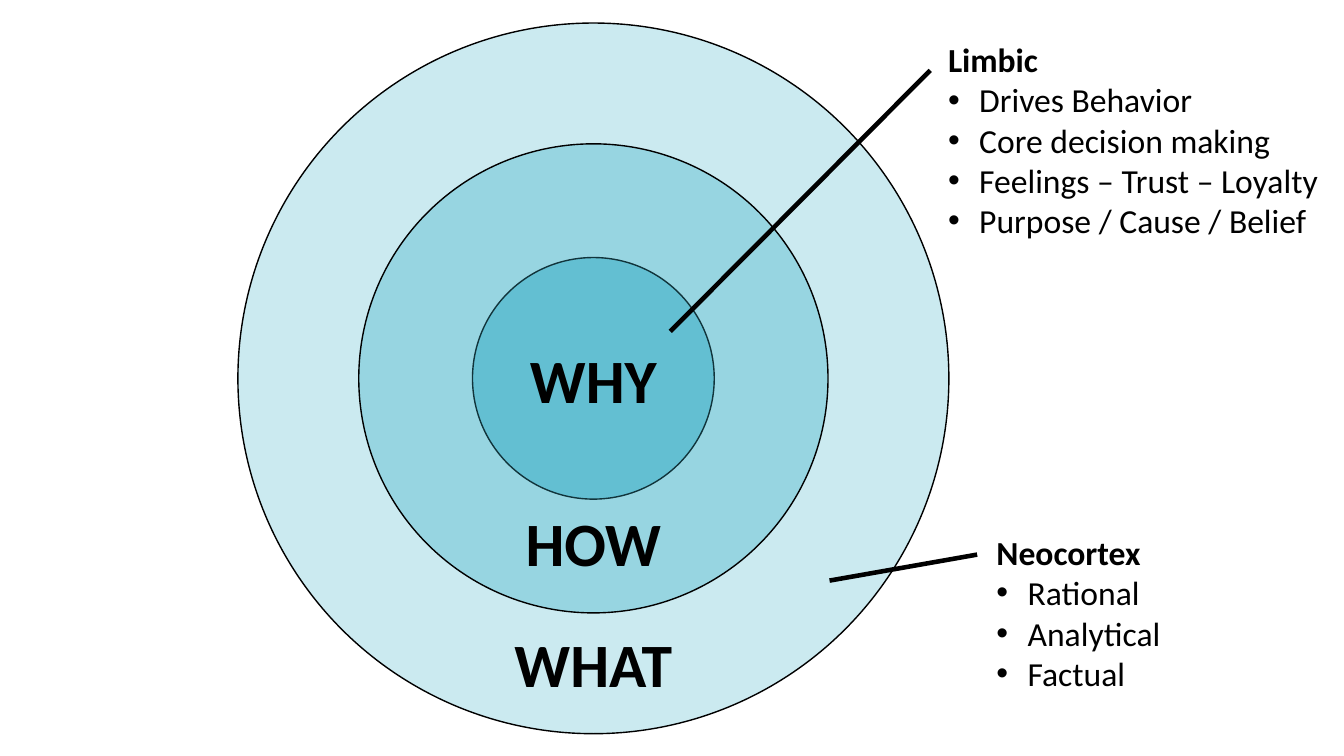
from pptx import Presentation
from pptx.dml.color import RGBColor
from pptx.enum.shapes import MSO_CONNECTOR, MSO_SHAPE
from pptx.enum.text import MSO_ANCHOR, MSO_AUTO_SIZE, PP_ALIGN
from pptx.oxml.ns import qn
from pptx.util import Inches, Pt
from lxml import etree

OVAL = MSO_SHAPE.OVAL
STRAIGHT = MSO_CONNECTOR.STRAIGHT
MIDDLE = MSO_ANCHOR.MIDDLE
FIT_SHAPE = MSO_AUTO_SIZE.SHAPE_TO_FIT_TEXT
CENTER, LEFT = PP_ALIGN.CENTER, PP_ALIGN.LEFT

BLACK = RGBColor(0x00, 0x00, 0x00)
PALE_TEAL = RGBColor(0xCB, 0xEA, 0xF0)
MID_TEAL = RGBColor(0x97, 0xD5, 0xE1)
DEEP_TEAL = RGBColor(0x63, 0xBF, 0xD2)
DARK_TEAL = RGBColor(0x11, 0x34, 0x3B)

FONT = "Calibri"
SLIDE_WIDTH, SLIDE_HEIGHT = Inches(13.33), Inches(7.5)
COLUMN, ROW = SLIDE_WIDTH / 100, SLIDE_HEIGHT / 100
BULLET_INDENT = Inches(0.31)

RINGS = [
    (1, PALE_TEAL, BLACK),
    (0.66, MID_TEAL, BLACK),
    (0.34, DEEP_TEAL, DARK_TEAL),
]
RING_LABELS = [("WHY", 0.5), ("HOW", 0.73), ("WHAT", 0.9)]
LIMBIC = ["Drives Behavior", "Core decision making",
          "Feelings – Trust – Loyalty", "Purpose / Cause / Belief"]
NEOCORTEX = ["Rational", "Analytical", "Factual"]


def grid_box(left, top, width, height):
    """Turn a box in columns and rows into slide lengths."""
    return (int(left * COLUMN), int(top * ROW),
            int(width * COLUMN), int(height * ROW))


def add_text(page, box, lines, size, align):
    """Write a bold first line and bulleted lines below it."""
    shape = page.shapes.add_textbox(*box)
    frame = shape.text_frame
    frame.word_wrap = False
    frame.auto_size = FIT_SHAPE
    for index, line in enumerate(lines):
        para = frame.add_paragraph() if index else frame.paragraphs[0]
        para.text = line
        para.alignment = align
        if index:
            properties = para._p.get_or_add_pPr()
            properties.set("marL", str(BULLET_INDENT))
            properties.set("indent", str(-BULLET_INDENT))
            etree.SubElement(properties, qn("a:buFont")).set("typeface", "Arial")
            etree.SubElement(properties, qn("a:buChar")).set("char", "•")
        para.font.name = FONT
        para.font.size = Pt(size)
        para.font.bold = index == 0
        para.font.color.rgb = BLACK
    return frame


def add_golden_circle(page, box):
    """Draw the concentric rings and their labels inside a square box."""
    left, top, width, height = box
    for share, fill, outline in RINGS:
        margin = (1 - share) / 2
        ring = page.shapes.add_shape(
            OVAL, int(left + margin * width), int(top + margin * height),
            int(share * width), int(share * height))
        ring.shadow.inherit = False
        ring.fill.solid()
        ring.fill.fore_color.rgb = fill
        ring.line.color.rgb = outline
        ring.line.width = Pt(1)
    label_width, label_height = int(0.3 * width), int(0.12 * height)
    for label, middle in RING_LABELS:
        label_box = (int(left + (width - label_width) / 2),
                     int(top + middle * height - label_height / 2),
                     label_width, label_height)
        frame = add_text(page, label_box, [label], 44, CENTER)
        frame.vertical_anchor = MIDDLE


def add_callout(page, box, heading, traits, start, end):
    """Place a trait list in its box and a pointer between box shares."""
    left, top, width, height = box
    add_text(page, box, [heading, *traits], 24, LEFT)
    pointer = page.shapes.add_connector(
        STRAIGHT,
        int(left + start[0] * width), int(top + start[1] * height),
        int(left + end[0] * width), int(top + end[1] * height))
    pointer.line.color.rgb = BLACK
    pointer.line.width = Pt(3.25)
    etree.SubElement(pointer._element.spPr, qn("a:effectLst"))


def main():
    """Build and save the slide."""
    deck = Presentation()
    deck.slide_width, deck.slide_height = SLIDE_WIDTH, SLIDE_HEIGHT
    page = deck.slides.add_slide(deck.slide_layouts[6])
    add_golden_circle(page, grid_box(17.7, 3.05, 52.9, 94))
    add_callout(page, grid_box(73.4, 69.7, 13.9, 22.9), "Neocortex", NEOCORTEX,
                (-0.05, 0.16), (-0.84, 0.31))
    add_callout(page, grid_box(69.8, 4.5, 29.3, 28.3), "Limbic", LIMBIC,
                (-0.02, 0.17), (-0.68, 1.39))
    deck.save("out.pptx")


if __name__ == "__main__":
    main()
